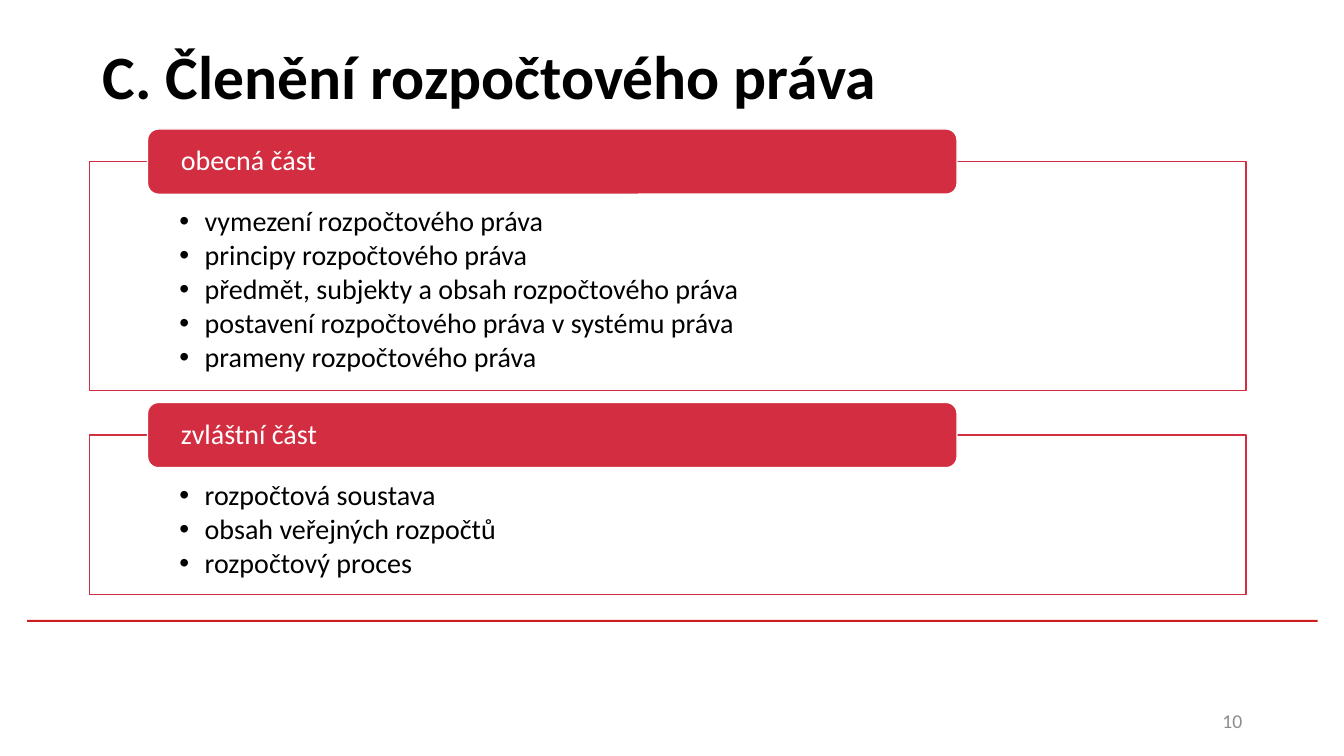
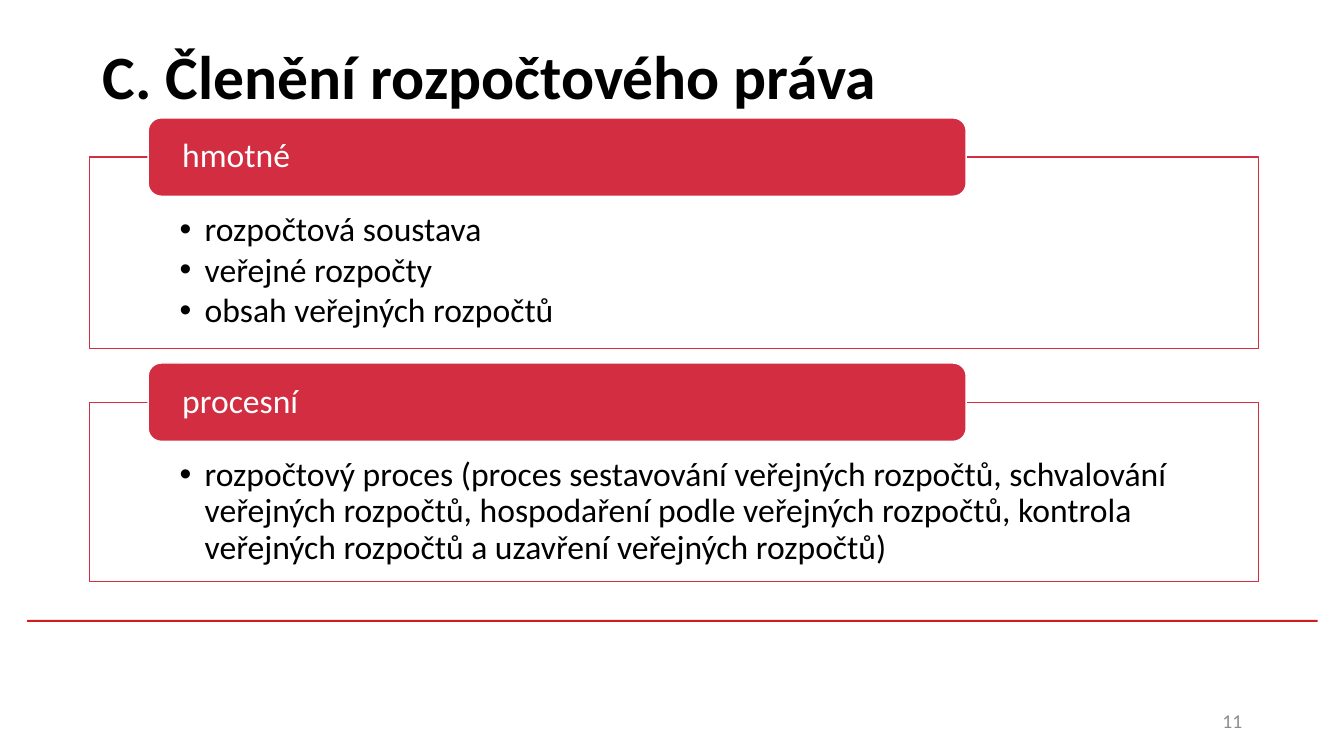
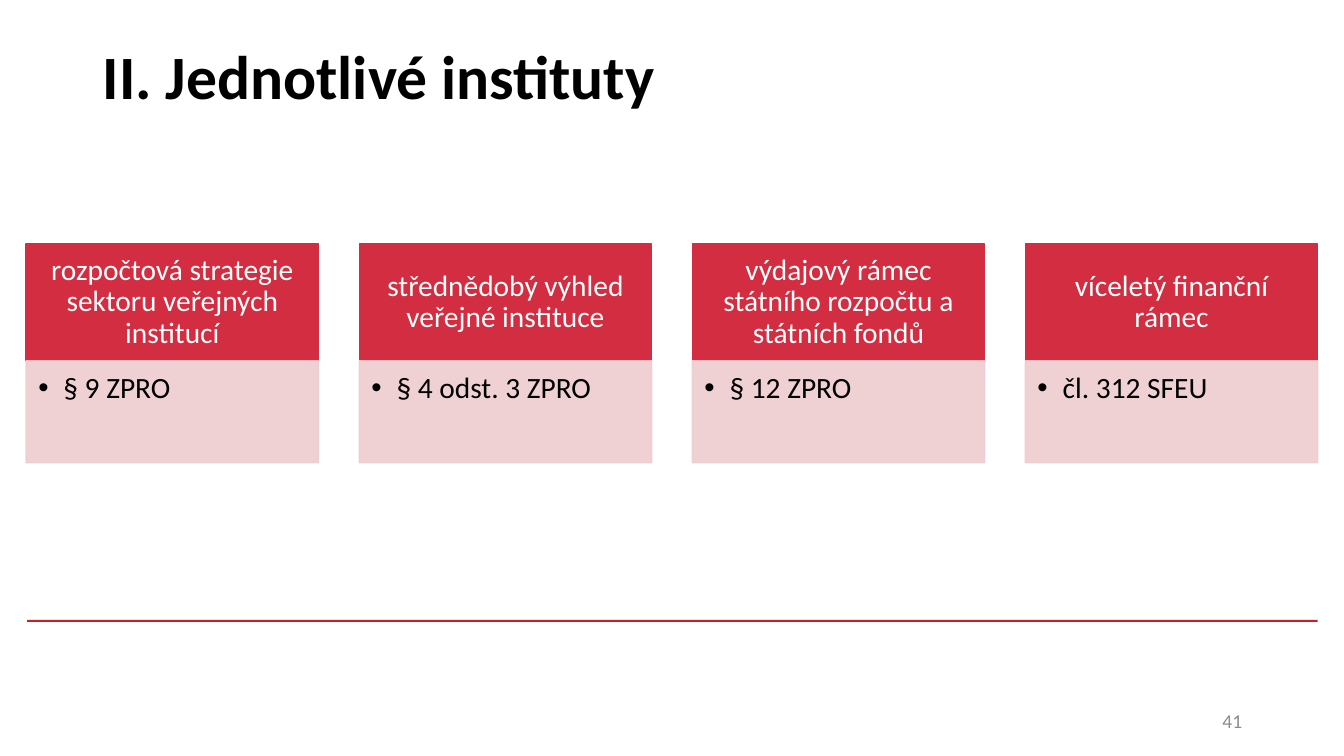
"""Builds three slides on the structure of budget law."""
from lxml import etree
from pptx import Presentation, util as u
from pptx.dml.color import RGBColor
from pptx.enum import shapes, text
from pptx.oxml.ns import qn

WIDTH, HEIGHT = 13.33, 7.5
FONT = "Calibri"
RED, RULE, PINK, GREY, BLACK, WHITE = "D22D40", "CD1F21", "EECDCF", "8C8C8C", "000000", "FFFFFF"
RECT, ROUND = shapes.MSO_SHAPE.RECTANGLE, shapes.MSO_SHAPE.ROUNDED_RECTANGLE
TOP, MIDDLE = text.MSO_ANCHOR.TOP, text.MSO_ANCHOR.MIDDLE
LEFT, CENTER, RIGHT = text.PP_ALIGN.LEFT, text.PP_ALIGN.CENTER, text.PP_ALIGN.RIGHT

PANEL_SLIDES = [
    dict(title="C. Členění rozpočtového práva", number="10", top=1.28, width=11.47, size=20, panels=[
        ("obecná část", 2.27, [
            "vymezení rozpočtového práva",
            "principy rozpočtového práva",
            "předmět, subjekty a obsah rozpočtového práva",
            "postavení rozpočtového práva v systému práva",
            "prameny rozpočtového práva",
        ]),
        ("zvláštní část", 1.58, [
            "rozpočtová soustava",
            "obsah veřejných rozpočtů",
            "rozpočtový proces",
        ]),
    ]),
    dict(title="C. Členění rozpočtového práva", number="11", top=1.17, width=11.59, size=24, panels=[
        ("hmotné", 1.9, [
            "rozpočtová soustava",
            "veřejné rozpočty",
            "obsah veřejných rozpočtů",
        ]),
        ("procesní", 1.78, [
            "rozpočtový proces (proces sestavování veřejných rozpočtů, schvalování veřejných "
            "rozpočtů, hospodaření podle veřejných rozpočtů, kontrola veřejných rozpočtů "
            "a uzavření veřejných rozpočtů)",
        ]),
    ]),
]
CARD_SLIDE = dict(title="II. Jednotlivé instituty", number="41", size=21, cards=[
    ("rozpočtová strategie sektoru veřejných institucí", "§ 9 ZPRO"),
    ("střednědobý výhled veřejné instituce", "§ 4 odst. 3 ZPRO"),
    ("výdajový rámec státního rozpočtu a státních fondů", "§ 12 ZPRO"),
    ("víceletý finanční rámec", "čl. 312 SFEU"),
])


def color(value):
    return RGBColor.from_string(value)


def write(box, lines, size, fill=BLACK, bold=False, align=LEFT, anchor=MIDDLE,
          insets=(0.1, 0.05, 0.1, 0.05), spacing=None, after=0, bullet=False):
    frame = box.text_frame
    frame.word_wrap = True
    frame.vertical_anchor = anchor
    frame.margin_left, frame.margin_top, frame.margin_right, frame.margin_bottom = map(u.Inches, insets)
    for index, line in enumerate(lines):
        para = frame.paragraphs[0] if index == 0 else frame.add_paragraph()
        para.alignment = align
        para.line_spacing = spacing
        para.space_after = u.Pt(after)
        if bullet:
            props = para._p.get_or_add_pPr()
            props.set("marL", str(u.Inches(0.25)))
            props.set("indent", str(u.Inches(-0.25)))
            etree.SubElement(props, qn("a:buFont")).set("typeface", "Arial")
            etree.SubElement(props, qn("a:buChar")).set("char", "•")
        span = para.add_run()
        span.text = line
        span.font.name, span.font.size, span.font.bold = FONT, u.Pt(size), bold
        span.font.color.rgb = color(fill)


def add_box(slide, kind, place, fill, line=None, opacity=100):
    box = slide.shapes.add_shape(kind, *map(u.Inches, place))
    box.shadow.inherit = False
    box.fill.solid()
    box.fill.fore_color.rgb = color(fill)
    if line:
        box.line.color.rgb = color(line)
        box.line.width = u.Pt(1)
    else:
        box.line.fill.background()
    if opacity < 100:
        for tint in box.element.spPr.iter(qn("a:srgbClr")):
            etree.SubElement(tint, qn("a:alpha")).set("val", str(opacity * 1000))
    return box


def add_page(deck, title, number):
    slide = deck.slides.add_slide(deck.slide_layouts[5])
    add_box(slide, RECT, (0.27, 6.15, 12.8, 0.02), RULE)
    heading = slide.shapes.title
    heading.left, heading.top, heading.width, heading.height = map(u.Inches, (0.92, 0.02, 11.5, 1.45))
    write(heading, [title], 44, bold=True)
    page_number = slide.shapes.add_textbox(*map(u.Inches, (9.42, 6.95, 3, 0.4)))
    write(page_number, [number], 14, GREY, align=RIGHT)
    return slide


def add_panels(slide, top, width, size, panels):
    left, em = 0.89, size / 72
    tab_height, gap = 2.33 * em, 0.43 * em
    for label, height, items in panels:
        middle = top + tab_height / 2
        panel = add_box(slide, RECT, (left, middle, width, height), WHITE, RED)
        write(panel, items, size, anchor=TOP, insets=(0.89, 1.65 * em, 0.89, 0.57 * em),
              spacing=0.9, after=round(0.13 * size, 1), bullet=True)
        tab = add_box(slide, ROUND, (left + 0.05 * width, top, 0.7 * width, tab_height), RED, WHITE)
        write(tab, [label], size, WHITE, insets=(0.3, 0, 0.3, 0), spacing=0.9)
        top = middle + height + gap


def add_cards(slide, size, cards):
    left, top, width, head_height, body_height = 0.26, 2.42, 2.9, 1.16, 1.01
    step = (WIDTH - 2 * left - width) / (len(cards) - 1)
    for column, (label, source) in enumerate(cards):
        x = left + column * step
        head = add_box(slide, RECT, (x, top, width, head_height), RED, RED)
        write(head, [label], size, WHITE, align=CENTER, insets=(0.16, 0.09, 0.16, 0.09), spacing=0.9)
        body = add_box(slide, RECT, (x, top + head_height, width, body_height), PINK, PINK, opacity=90)
        write(body, [source], size, anchor=TOP, insets=(0.12, 0.12, 0.16, 0.18), spacing=0.9, bullet=True)


def main():
    deck = Presentation()
    deck.slide_width, deck.slide_height = u.Inches(WIDTH), u.Inches(HEIGHT)
    for page in PANEL_SLIDES:
        slide = add_page(deck, page["title"], page["number"])
        add_panels(slide, page["top"], page["width"], page["size"], page["panels"])
    slide = add_page(deck, CARD_SLIDE["title"], CARD_SLIDE["number"])
    add_cards(slide, CARD_SLIDE["size"], CARD_SLIDE["cards"])
    deck.save("out.pptx")


if __name__ == "__main__":
    main()
